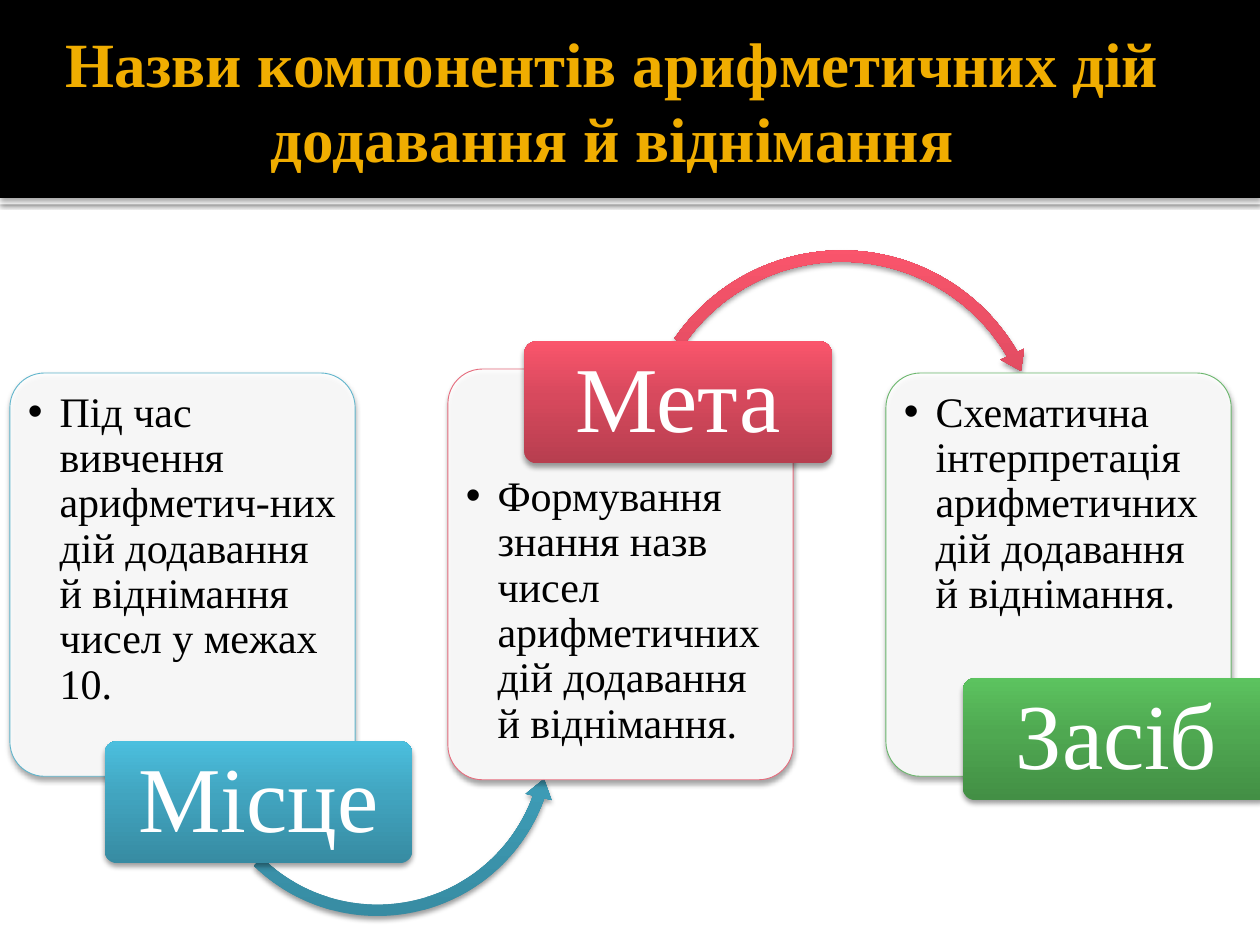
import copy

import lxml.etree
import pptx
import pptx.dml.color
import pptx.enum.shapes
import pptx.enum.text
import pptx.oxml.ns
import pptx.util

Cm = pptx.util.Cm
Pt = pptx.util.Pt
qn = pptx.oxml.ns.qn
FORM = pptx.enum.shapes.MSO_SHAPE
ALIGN = pptx.enum.text.PP_ALIGN
ANCHOR = pptx.enum.text.MSO_ANCHOR

HUES = {
    "black": "000000",
    "white": "FFFFFF",
    "gold": "F0AD00",
    "blue": ("378BA2", "41A4BF", "4BBFDE"),
    "red": ("B73E4F", "D7495D", "FA556C"),
    "green": ("438F45", "4FA851", "5CC35F"),
    "blue edge": "60B5CC",
    "red edge": "E66C7D",
    "green edge": "6BB76D",
}
STEPS = [
    {"hue": "blue", "name": "Місце", "card": (7.52, 8.13), "list": (7.52, 6.4),
     "tag": (2.11, 14.94),
     "arrow": (FORM.LEFT_CIRCULAR_ARROW, 3.89, 11.18, 7.44,
               (0.031, 3.753, 11.842, 80.579, 0.036)),
     "text": "Під час вивчення арифметич-них дій додавання й віднімання чисел у межах 10."},
    {"hue": "red", "name": "Мета", "card": (7.44, 8.28), "list": (9.22, 6.5),
     "tag": (10.57, 6.88),
     "arrow": (FORM.CIRCULAR_ARROW, 12.73, 4.9, 8.48,
               (0.027, 3.265, 197.905, 128.68, 0.031)),
     "text": "Формування знання назв чисел арифметичних дій додавання й віднімання."},
    {"hue": "green", "name": "Засіб", "card": (7.52, 8.13), "list": (7.52, 6.4),
     "tag": (19.41, 13.67), "arrow": None,
     "text": "Схематична інтерпретація арифметичних дій додавання й віднімання."},
]


class Deck:
    """Hold the style and the current slide, and draw each kind of element."""

    font = "Times New Roman"
    card_wide, card_left, card_step = 6.96, 0.2, 8.83
    tag_wide, tag_high = 6.2, 2.46

    def __init__(self, slide):
        self.slide = slide

    def paint(self, hue):
        return pptx.dml.color.RGBColor.from_string(HUES[hue])

    def shade(self, shape, alpha=38, blur=3.1, gap=2):
        effects = lxml.etree.SubElement(shape._element.spPr, qn("a:effectLst"))
        cast = lxml.etree.SubElement(
            effects, qn("a:outerShdw"), blurRad=str(Pt(blur)), dist=str(Pt(gap)),
            dir="5400000", algn="ctr", rotWithShape="0")
        tint = lxml.etree.SubElement(cast, qn("a:srgbClr"), val=HUES["black"])
        lxml.etree.SubElement(tint, qn("a:alpha"), val=str(alpha * 1000))

    def shape(self, form, left, top, wide, high, adjust=()):
        shape = self.slide.shapes.add_shape(form, Cm(left), Cm(top), Cm(wide), Cm(high))
        shape.shadow.inherit = False
        shape._element.spPr.remove(shape._element.spPr.find(qn("a:effectLst")))
        shape.line.fill.background()
        for spot, value in enumerate(adjust):
            shape.adjustments[spot] = value
        return shape

    def blend(self, shape, hue):
        shape.fill.gradient()
        shape.fill.gradient_angle = 90
        stops = shape._element.spPr.find(qn("a:gradFill")).find(qn("a:gsLst"))
        stops.insert(1, copy.deepcopy(stops[0]))
        for stop, place, tone in zip(shape.fill.gradient_stops, (0, 0.55, 1), HUES[hue]):
            stop.position = place
            stop.color.rgb = pptx.dml.color.RGBColor.from_string(tone)

    def letter(self, shape, text, size, hue, align, anchor, pad, bold=False):
        frame = shape.text_frame
        frame.text = text
        frame.word_wrap = True
        frame.auto_size = pptx.enum.text.MSO_AUTO_SIZE.NONE
        frame.vertical_anchor = anchor
        frame.margin_left = frame.margin_right = Cm(pad[0])
        frame.margin_top = frame.margin_bottom = Cm(pad[1])
        line = frame.paragraphs[0]
        line.alignment = align
        line.space_before = Pt(0)
        line.font.name = self.font
        line.font.size = Pt(size)
        line.font.bold = bold
        line.font.color.rgb = self.paint(hue)
        return line

    def place(self, holder, left, top, wide, high):
        holder.left, holder.top = Cm(left), Cm(top)
        holder.width, holder.height = Cm(wide), Cm(high)
        self.slide.shapes._spTree.append(holder._element)

    def band(self, top, high, hue):
        band = self.shape(FORM.RECTANGLE, 0, top, 25.4, high)
        band.fill.solid()
        band.fill.fore_color.rgb = self.paint(hue)
        return band

    def title(self, text):
        holder = self.slide.shapes.title
        self.place(holder, 0.89, 0.74, 22.78, 2.54)
        self.letter(holder, text, 36, "gold", ALIGN.CENTER, ANCHOR.MIDDLE, (0.25, 0.13), True)
        holder.text_frame.margin_right = Cm(0.13)

    def card(self, left, top, high, hue):
        card = self.shape(FORM.ROUNDED_RECTANGLE, left, top, self.card_wide, high, (0.1,))
        card.fill.solid()
        card.fill.fore_color.rgb = self.paint("white")
        tint = card._element.spPr.find(qn("a:solidFill"))[0]
        lxml.etree.SubElement(tint, qn("a:alpha"), val="90000")
        card.line.color.rgb = self.paint(hue + " edge")
        card.line.width = Pt(0.5)
        self.shade(card)

    def list(self, holder, left, top, high, text):
        self.place(holder, left, top, self.card_wide, high)
        line = self.letter(holder, text, 24, "black", ALIGN.LEFT, ANCHOR.TOP, (0.36, 0.36))
        line.line_spacing = 0.9
        props = line._p.get_or_add_pPr()
        props.set("marL", str(Cm(0.64)))
        props.set("indent", str(Cm(-0.64)))
        mark = lxml.etree.Element(qn("a:buChar"), char="•")
        props.insert_element_before(mark, "a:tabLst", "a:defRPr", "a:extLst")

    def arrow(self, form, left, top, size, adjust, hue):
        arrow = self.shape(form, left, top, size, size, adjust)
        self.blend(arrow, hue)
        self.shade(arrow)

    def tag(self, left, top, hue, text):
        tag = self.shape(FORM.ROUNDED_RECTANGLE, left, top,
                         self.tag_wide, self.tag_high, (0.1,))
        self.blend(tag, hue)
        self.shade(tag)
        line = self.letter(tag, text, 53, "white", ALIGN.CENTER, ANCHOR.MIDDLE, (0.2, 0.1))
        line.line_spacing = 0.9


def main():
    show = pptx.Presentation()
    show.slide_width, show.slide_height = Cm(25.4), Cm(19.05)
    slide = show.slides.add_slide(show.slide_layouts[4])
    deck = Deck(slide)
    lists = [holder for holder in slide.placeholders if holder.placeholder_format.idx in (1, 2, 4)]
    spare = slide.placeholders[3]._element
    spare.getparent().remove(spare)

    deck.shade(deck.band(3.99, 0.13, "white"), 60, 2.5, 0.8)
    deck.band(0, 3.99, "black")
    deck.title("Назви компонентів арифметичних дій додавання й віднімання")
    for spot, (step, holder) in enumerate(zip(STEPS, lists)):
        left = deck.card_left + spot * deck.card_step
        deck.card(left, *step["card"], step["hue"])
        deck.list(holder, left, *step["list"], step["text"])
        if step["arrow"]:
            deck.arrow(*step["arrow"], step["hue"])
        deck.tag(*step["tag"], step["hue"], step["name"])
    show.save("out.pptx")


if __name__ == "__main__":
    main()
